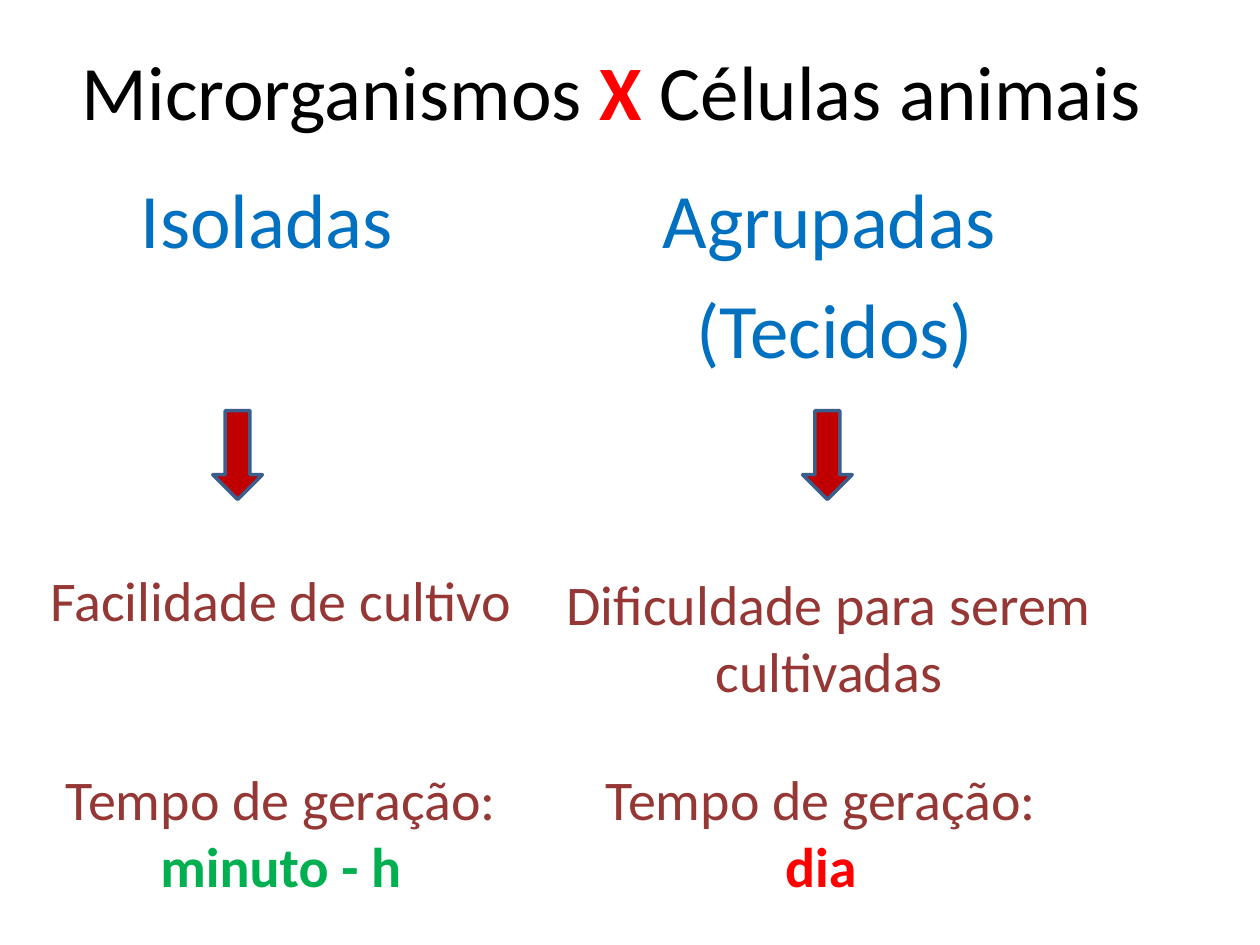
import dataclasses

import pptx
import pptx.dml.color
import pptx.enum.shapes
import pptx.enum.text
import pptx.util

Cm = pptx.util.Cm
Pt = pptx.util.Pt
ALIGN = pptx.enum.text.PP_ALIGN
ANCHOR = pptx.enum.text.MSO_ANCHOR


def rgb(value):
    return pptx.dml.color.RGBColor.from_string(value)


@dataclasses.dataclass(frozen=True)
class Theme:
    font: str = "Calibri"
    heading_size: int = 44
    body_size: int = 32
    title: str = "000000"
    heading: str = "0070C0"
    body: str = "953735"
    fast: str = "00B050"
    alert: str = "FF0000"
    arrow_fill: str = "C00000"
    arrow_line: str = "3A5F8C"


def add_run(p, text, *, font, size, color, bold=False):
    r = p.add_run()
    r.text = text
    r.font.name = font
    r.font.size = Pt(size)
    r.font.bold = bold
    r.font.color.rgb = rgb(color)


class SlideBuilder:
    def __init__(self, s, theme):
        self.s = s
        self.theme = theme

    def text(self, box, runs, size, align=ALIGN.LEFT, anchor=ANCHOR.TOP):
        """Add a text box; runs are (text, color, bold) and box is in cm."""
        sp = self.s.shapes.add_textbox(*map(Cm, box))
        tf = sp.text_frame
        tf.word_wrap = True
        tf.vertical_anchor = anchor
        p = tf.paragraphs[0]
        p.alignment = align
        for text, color, bold in runs:
            add_run(p, text, font=self.theme.font, size=size, color=color, bold=bold)

    def title(self, box, runs):
        self.text(box, runs, self.theme.heading_size, ALIGN.JUSTIFY, ANCHOR.MIDDLE)

    def heading(self, left, top, width, text):
        box = (left, top, width, 2.14)
        self.text(box, [(text, self.theme.heading, False)], self.theme.heading_size)

    def body(self, box, text, accent="", accent_color=None):
        runs = [(text, self.theme.body, False)]
        if accent:
            runs.append((accent, accent_color, True))
        self.text(box, runs, self.theme.body_size, ALIGN.CENTER)

    def down_arrow(self, left, top):
        sp = self.s.shapes.add_shape(
            pptx.enum.shapes.MSO_SHAPE.DOWN_ARROW, Cm(left), Cm(top), Cm(1), Cm(1.79))
        sp.shadow.inherit = False
        sp.fill.solid()
        sp.fill.fore_color.rgb = rgb(self.theme.arrow_fill)
        sp.line.color.rgb = rgb(self.theme.arrow_line)
        sp.line.width = Pt(2)


def main():
    prs = pptx.Presentation()
    prs.slide_width, prs.slide_height = Cm(25.4), Cm(19.05)
    theme = Theme()
    slide = SlideBuilder(prs.slides.add_slide(prs.slide_layouts[6]), theme)

    slide.title((1.4, 0.53, 22.86, 2.57), [
        ("Microrganismos ", theme.title, False),
        ("X", theme.alert, True),
        (" Células animais", theme.title, False),
    ])

    heading_top = 3.33
    slide.heading(2.59, heading_top, 6.55, "Isoladas")
    slide.heading(13.11, heading_top, 8.13, "Agrupadas")
    slide.heading(13.79, 5.56, 6.55, "(Tecidos)")

    for left in (4.29, 16.18):
        slide.down_arrow(left, 8.28)

    slide.body((0.1, 11.28, 11.13, 1.63), "Facilidade de cultivo")
    slide.body((10.36, 11.35, 12.7, 3), "Dificuldade para serem cultivadas")

    for left, width, time, color in (
        (0.1, 11.13, "minuto - h", theme.fast),
        (11.18, 10.74, "dia", theme.alert),
    ):
        slide.body((left, 15.29, width, 3), "Tempo de geração: ", time, color)

    prs.save("out.pptx")


if __name__ == "__main__":
    main()
